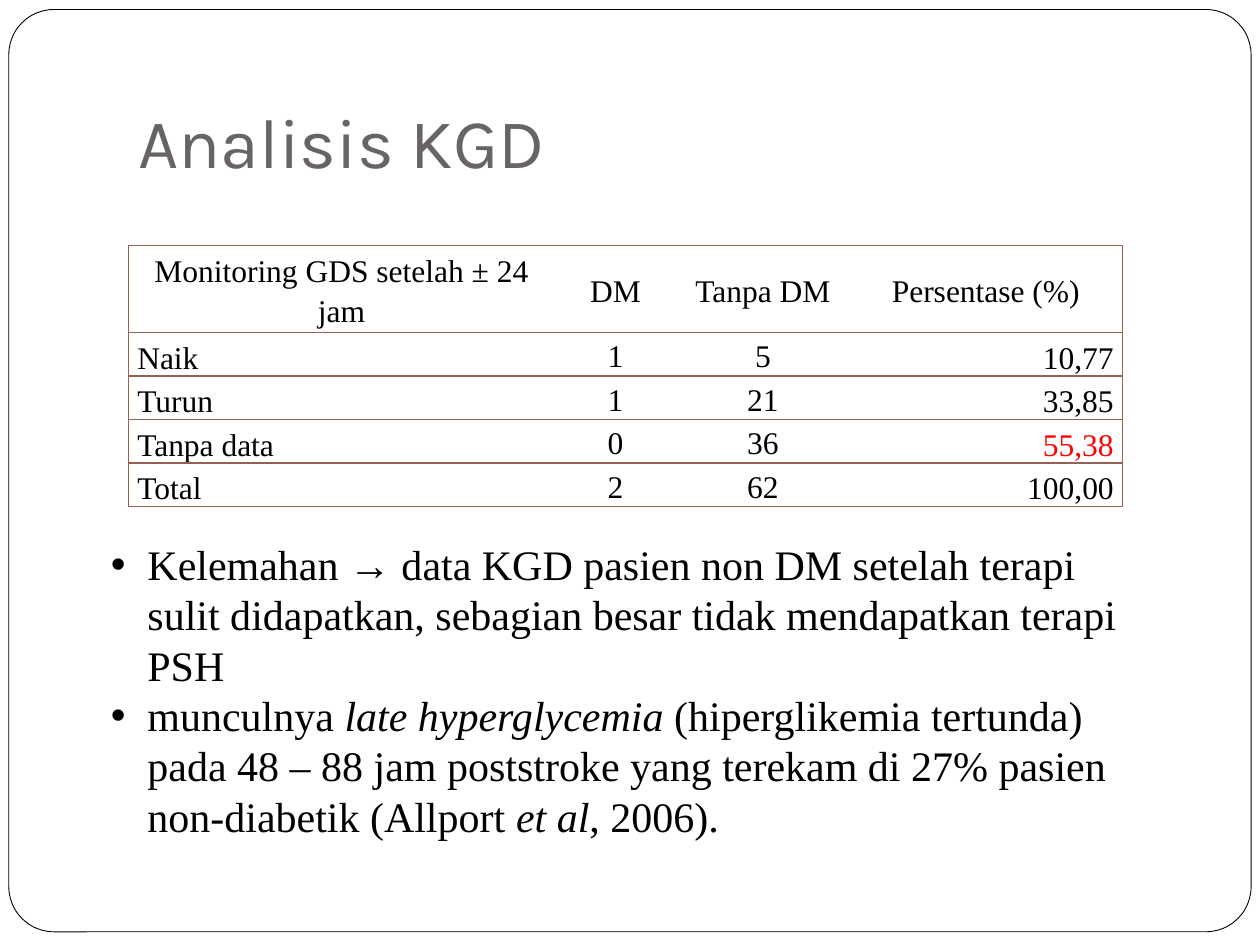
from dataclasses import dataclass
from typing import NamedTuple

from lxml.etree import SubElement
from pptx import Presentation
from pptx.dml.color import RGBColor
from pptx.enum.shapes import MSO_SHAPE as Preset
from pptx.enum.text import MSO_ANCHOR as Anchor, MSO_AUTO_SIZE as AutoSize, PP_ALIGN as Align
from pptx.oxml.ns import qn
from pptx.util import Inches, Pt


@dataclass(frozen=True)
class Theme:
    paper: str = "FFFFFF"
    ink: str = "000000"
    heading: str = "696464"
    rule: str = "956251"
    alert: str = "FF0000"
    heading_font: str = "Karla"
    text_font: str = "Times New Roman"
    heading_size: int = 40
    list_size: int = 24
    table_size: int = 18


class Box(NamedTuple):
    left: float
    top: float
    width: float
    height: float

    def lengths(self) -> list:
        sides = (WIDTH, HEIGHT, WIDTH, HEIGHT)
        return [Inches(share * side) for share, side in zip(self, sides)]


class Phrase(NamedTuple):
    text: str
    italic: bool = False


class Column(NamedTuple):
    header: str
    width: float
    align: Align
    anchor: Anchor


THEME = Theme()
WIDTH, HEIGHT = 10, 7.5
FRAME_BOX = Box(0.007, 0.01, 0.986, 0.976)
TITLE_BOX = Box(0.1, 0.04, 0.85, 0.167)
TABLE_BOX = Box(0.102, 0.26, 0.789, 0.268)
LIST_BOX = Box(0.078, 0.563, 0.828, 0.283)
HEADER_HEIGHT, ROW_HEIGHT = 0.63, 0.31

COLUMNS = [
    Column("Monitoring GDS setelah ± 24 jam", 3.38, Align.LEFT, Anchor.BOTTOM),
    Column("DM", 0.97, Align.CENTER, Anchor.MIDDLE),
    Column("Tanpa DM", 1.37, Align.CENTER, Anchor.MIDDLE),
    Column("Persentase (%)", 2.17, Align.RIGHT, Anchor.BOTTOM),
]
GLUCOSE_CHANGES = [
    ("Naik", "1", "5", "10,77"),
    ("Turun", "1", "21", "33,85"),
    ("Tanpa data", "0", "36", "55,38"),
    ("Total", "2", "62", "100,00"),
]
HIGHLIGHT = "55,38"
FINDINGS = [
    [Phrase("Kelemahan → data KGD pasien non DM setelah terapi sulit didapatkan, "
            "sebagian besar tidak mendapatkan terapi PSH")],
    [Phrase("munculnya "), Phrase("late hyperglycemia ", True),
     Phrase("(hiperglikemia tertunda) pada 48 – 88 jam poststroke yang terekam "
            "di 27% pasien non-diabetik (Allport "),
     Phrase("et al", True), Phrase(", 2006).")],
]


def place(shape, box: Box) -> None:
    shape.left, shape.top, shape.width, shape.height = box.lengths()


def add_run(paragraph, phrase: Phrase, font: str, size: int, color: str) -> None:
    run = paragraph.add_run()
    run.text = phrase.text
    run.font.name = font
    run.font.size = Pt(size)
    run.font.italic = phrase.italic
    run.font.color.rgb = RGBColor.from_string(color)


def draw_frame(slide) -> None:
    frame = slide.shapes.add_shape(Preset.ROUNDED_RECTANGLE, *FRAME_BOX.lengths())
    frame.adjustments[0] = 0.049
    frame.shadow.inherit = False
    frame.fill.solid()
    frame.fill.fore_color.rgb = RGBColor.from_string(THEME.paper)
    frame.line.color.rgb = RGBColor.from_string(THEME.ink)
    frame.line.width = Pt(0.5)
    slide.shapes.title.element.addprevious(frame.element)


def draw_title(title, text: str) -> None:
    place(title, TITLE_BOX)
    title.text_frame.vertical_anchor = Anchor.BOTTOM
    title.text_frame.margin_bottom = Inches(0.1)
    heading = title.text_frame.paragraphs[0]
    heading.alignment = Align.LEFT
    add_run(heading, Phrase(text), THEME.heading_font, THEME.heading_size, THEME.heading)


def draw_findings(body) -> None:
    place(body, LIST_BOX)
    frame = body.text_frame
    frame.word_wrap = True
    frame.auto_size = AutoSize.SHAPE_TO_FIT_TEXT
    for index, phrases in enumerate(FINDINGS):
        finding = frame.add_paragraph() if index else frame.paragraphs[0]
        finding.space_before = Pt(0)
        properties = finding._p.get_or_add_pPr()
        properties.set("marL", str(Inches(0.29)))
        properties.set("indent", str(Inches(-0.29)))
        SubElement(properties, qn("a:buFont"), typeface="Arial")
        SubElement(properties, qn("a:buChar"), char="•")
        for phrase in phrases:
            add_run(finding, phrase, THEME.text_font, THEME.list_size, THEME.ink)


def rule_cell(cell, ruled: dict[str, bool]) -> None:
    properties = cell._tc.get_or_add_tcPr()
    for side, visible in ruled.items():
        border = SubElement(properties, qn(f"a:ln{side}"), w=str(Pt(1)))
        if visible:
            fill = SubElement(border, qn("a:solidFill"))
            SubElement(fill, qn("a:srgbClr"), val=THEME.rule)
        else:
            SubElement(border, qn("a:noFill"))


def fill_cell(cell, text: str, align: Align, anchor: Anchor) -> None:
    cell.fill.solid()
    cell.fill.fore_color.rgb = RGBColor.from_string(THEME.paper)
    cell.vertical_anchor = anchor
    cell.margin_left = cell.margin_right = Inches(0.07)
    cell.margin_top = cell.margin_bottom = 0
    entry = cell.text_frame.paragraphs[0]
    entry.alignment = align
    entry.line_spacing = 1.15
    color = THEME.alert if text == HIGHLIGHT else THEME.ink
    add_run(entry, Phrase(text), THEME.text_font, THEME.table_size, color)


def draw_table(slide) -> None:
    rows = [tuple(column.header for column in COLUMNS), *GLUCOSE_CHANGES]
    table = slide.shapes.add_table(len(rows), len(COLUMNS), *TABLE_BOX.lengths()).table
    table.first_row = table.horz_banding = False
    for column, grid_column in zip(COLUMNS, table.columns):
        grid_column.width = Inches(column.width)
    last = len(COLUMNS) - 1
    for r, values in enumerate(rows):
        table.rows[r].height = Inches(ROW_HEIGHT if r else HEADER_HEIGHT)
        for c, (value, column) in enumerate(zip(values, COLUMNS)):
            cell = table.cell(r, c)
            rule_cell(cell, {"L": c == 0, "R": c == last, "T": True, "B": True})
            align, anchor = (column.align, column.anchor) if r else (Align.CENTER, Anchor.MIDDLE)
            fill_cell(cell, value, align, anchor)


def main() -> None:
    deck = Presentation()
    deck.slide_width, deck.slide_height = Inches(WIDTH), Inches(HEIGHT)
    slide = deck.slides.add_slide(deck.slide_layouts[1])
    draw_frame(slide)
    draw_title(slide.shapes.title, "Analisis KGD")
    draw_findings(slide.placeholders[1])
    draw_table(slide)
    deck.save("out.pptx")


if __name__ == "__main__":
    main()
